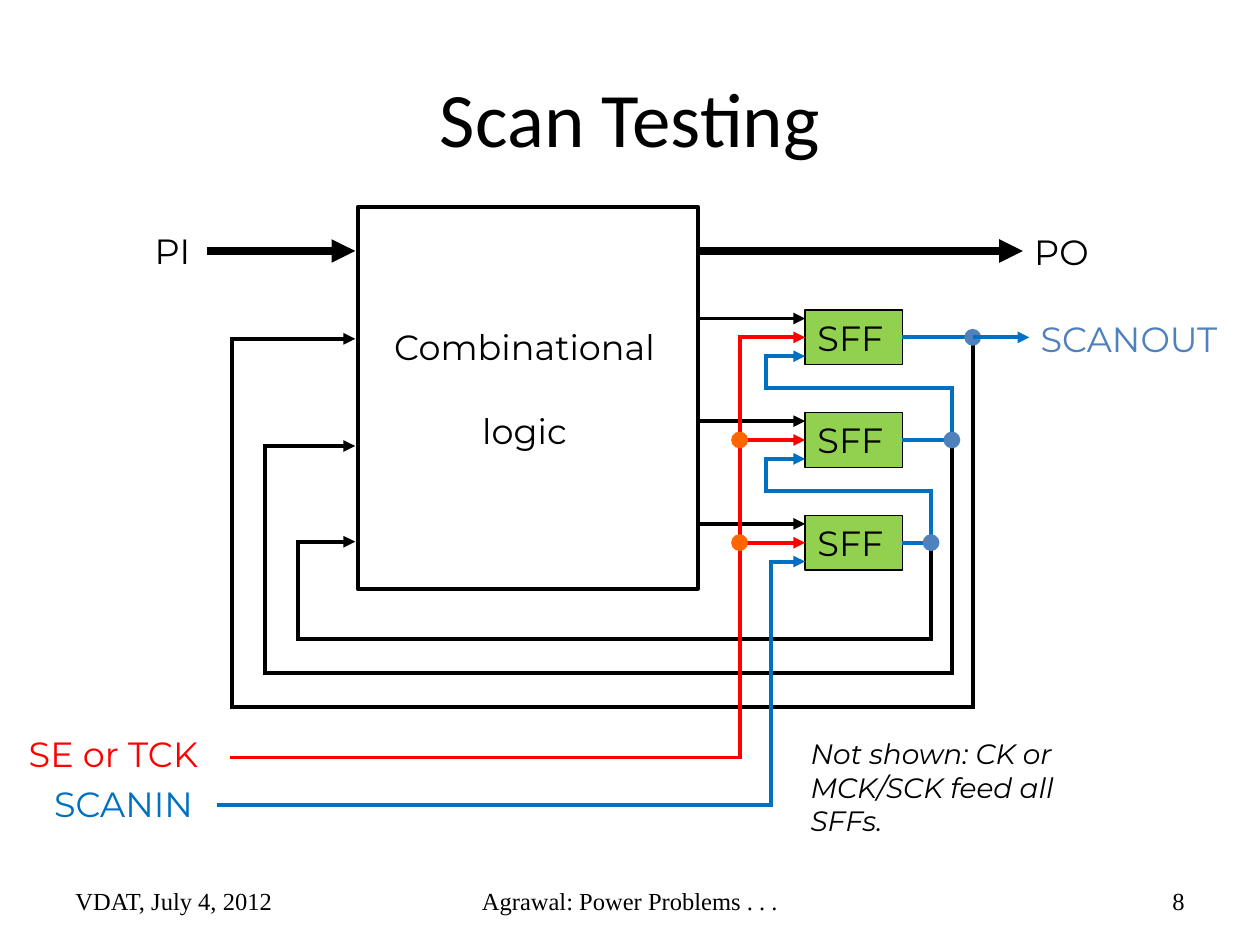
from itertools import pairwise

from pptx import Presentation
from pptx.dml.color import RGBColor
from pptx.enum.shapes import MSO_CONNECTOR as LINE, MSO_SHAPE as SHAPE
from pptx.enum.text import MSO_ANCHOR as ANCHOR, MSO_AUTO_SIZE as AUTO, PP_ALIGN as ALIGN
from pptx.oxml.ns import qn
from pptx.util import Cm, Pt
from lxml.etree import SubElement

COLORS = {"ink": "000000", "scan": "0070C0", "enable": "FF0000", "flop": "92D050",
          "node": "4F81BD", "tap": "FF6600"}
FORMATS = {
    "title": {"name": "Calibri", "size": Pt(44)},
    "footer": {"name": "Times New Roman", "size": Pt(14)},
    "label": {"name": "Montserrat", "size": Pt(20)},
    "note": {"name": "Montserrat", "size": Pt(16), "italic": True},
}


def rgb(name):
    return RGBColor.from_string(COLORS[name])


def write(s, lines, style="label", color="ink", align=ALIGN.LEFT, gap=0):
    tf = s.text_frame
    for i, line in enumerate(lines):
        p = tf.add_paragraph() if i else tf.paragraphs[0]
        p.alignment = align
        if i and gap:
            p.space_before = Pt(gap)
        r = p.add_run()
        r.text = line
        for key, value in FORMATS[style].items():
            setattr(r.font, key, value)
        r.font.color.rgb = rgb(color)
    return tf


def fit(tf):
    for key, value in {"word_wrap": False, "auto_size": AUTO.SHAPE_TO_FIT_TEXT,
                       "vertical_anchor": ANCHOR.TOP}.items():
        setattr(tf, key, value)


def label(slide, box, *lines, **options):
    s = slide.shapes.add_textbox(*map(Cm, box))
    fit(write(s, lines, **options))


def band(slide, box, text, style, align):
    """Add wrapped text centred vertically in a fixed box."""
    s = slide.shapes.add_textbox(*map(Cm, box))
    tf = write(s, [text], style, align=align)
    tf.word_wrap = True
    tf.vertical_anchor = ANCHOR.MIDDLE


def shape(slide, kind, box, fill=None, width=None):
    s = slide.shapes.add_shape(kind, *map(Cm, box))
    s.shadow.inherit = False
    if fill:
        s.fill.solid()
        s.fill.fore_color.rgb = rgb(fill)
    else:
        s.fill.background()
    if width:
        s.line.color.rgb = rgb("ink")
        s.line.width = Pt(width)
    else:
        s.line.fill.background()
    return s


def wire(slide, points, color="ink", width=2.25, arrow=True):
    """Draw a chain of straight connectors and return the last one."""
    legs = list(pairwise(points))
    for i, (start, end) in enumerate(legs, 1):
        c = slide.shapes.add_connector(LINE.STRAIGHT, *map(Cm, start + end))
        c.line.color.rgb = rgb(color)
        c.line.width = Pt(width)
        sp_pr = c.element.spPr
        ln = sp_pr.find(qn("a:ln"))
        if arrow and i == len(legs):
            SubElement(ln, qn("a:tailEnd"), type="triangle")
        else:
            ln.set("cap", "sq" if len(legs) > 1 else "flat")
        SubElement(sp_pr, qn("a:effectLst"))
    return c


def dot(slide, x, y, color):
    d = 0.34
    shape(slide, SHAPE.OVAL, (x - d / 2, y - d / 2, d, d), color)


def footer(slide, box):
    x, y, w, h = box
    side, middle = 5.93, 8.05
    for left, width, text, align in (
            (x, side, "VDAT, July 4, 2012", ALIGN.LEFT),
            (x + (w - middle) / 2, middle, "Agrawal: Power Problems . . .", ALIGN.CENTER),
            (x + w - side, side, "8", ALIGN.RIGHT)):
        band(slide, (left, y, width, h), text, "footer", align)


def logic_block(slide, box):
    x, y, w, h = box
    shape(slide, SHAPE.RECTANGLE, box, width=2.25)
    label(slide, (x + 0.33, y + 2.26, 6.07, 2.79), "Combinational", "logic",
          align=ALIGN.CENTER, gap=24.4)
    port = y + 0.89
    wire(slide, [(x - 3.04, port), (x - 0.05, port)], width=4.5)
    wire(slide, [(x + w, port), (x + w + 6.55, port)], width=4.5)
    label(slide, (x - 4.34, y + 0.33, 1.3, 1.09), "PI")
    label(slide, (x + w + 6.53, y + 0.35, 1.6, 1.09), "PO")


def scan_chain(slide, box, logic):
    """Place the flip-flop column in box and wire it to the logic block."""
    x, y, w, h = box
    lx, ly, lw, lh = logic
    rows, flop_h, pin = 3, 1.1, 0.38
    pitch = (h - flop_h) / (rows - 1)
    mids = [y + flop_h / 2 + pitch * i for i in range(rows)]
    nodes = [x + w + 1.42 - 0.42 * i for i in range(rows)]
    entries = [ly + 2.66, ly + 4.82, ly + 6.75]
    enable_x, scan_x, in_x = x - 1.32, x - 0.79, x - 0.69
    enable_y, in_y = y + 9.02, y + 9.97

    for i, (mid, node) in enumerate(zip(mids, nodes)):
        flop = shape(slide, SHAPE.RECTANGLE, (x, mid - flop_h / 2, w, flop_h), "flop", 0.75)
        fit(write(flop, ["SFF"]))
        wire(slide, [(lx + lw, mid - pin), (x, mid - pin)])
        loop_x, loop_y = lx - 2.54 + 0.67 * i, y + 8 - 0.68 * i
        wire(slide, [(node, mid), (node, loop_y), (loop_x, loop_y),
                     (loop_x, entries[i]), (lx - 0.05, entries[i])])
        select = wire(slide, [(enable_x, mid), (x, mid)], "enable")
        select.end_connect(flop, 1)
        output = wire(slide, [(x + w, mid), (node, mid)], "scan", arrow=False)
        output.begin_connect(flop, 3)

    wire(slide, [(4.67, enable_y), (enable_x, enable_y), (enable_x, mids[0])],
         "enable", arrow=False)
    wire(slide, [(4.42, in_y), (in_x, in_y), (in_x, mids[-1] + pin), (x, mids[-1] + pin)],
         "scan")
    for (target, source), node in zip(pairwise(mids), nodes[1:]):
        wire(slide, [(node, source), (node, source - 1.05), (scan_x, source - 1.05),
                     (scan_x, target + pin), (x, target + pin)], "scan")
    for mid, node in zip(mids, nodes):
        dot(slide, node, mid, "node")
    for mid in mids[1:]:
        dot(slide, enable_x, mid, "tap")
    wire(slide, [(nodes[0], mids[0]), (nodes[0] + 1.14, mids[0])], "scan")

    label(slide, (nodes[0] + 1.12, y + 0.03, 4.39, 1.09), "SCANOUT", color="node")
    label(slide, (0.84, in_y - 0.57, 3.56, 1.09), "SCANIN", color="scan")
    label(slide, (0.33, enable_y - 0.63, 4.45, 1.09), "SE or TCK", color="enable")
    label(slide, (x - 0.14, y + 8.48, 5.92, 2.29), "Not shown: CK or",
          "MCK/SCK feed all", "SFFs.", style="note")


def main():
    prs = Presentation()
    prs.slide_width, prs.slide_height = Cm(25.4), Cm(19.05)
    slide = prs.slides.add_slide(prs.slide_layouts[6])
    logic = (7.21, 4.17, 6.86, 7.7)
    band(slide, (1.27, 0.76, 22.86, 3.18), "Scan Testing", "title", ALIGN.CENTER)
    logic_block(slide, logic)
    scan_chain(slide, (16.23, 6.25, 1.96, 5.24), logic)
    footer(slide, (1.27, 17.65, 22.86, 1.02))
    prs.save("out.pptx")


if __name__ == "__main__":
    main()
